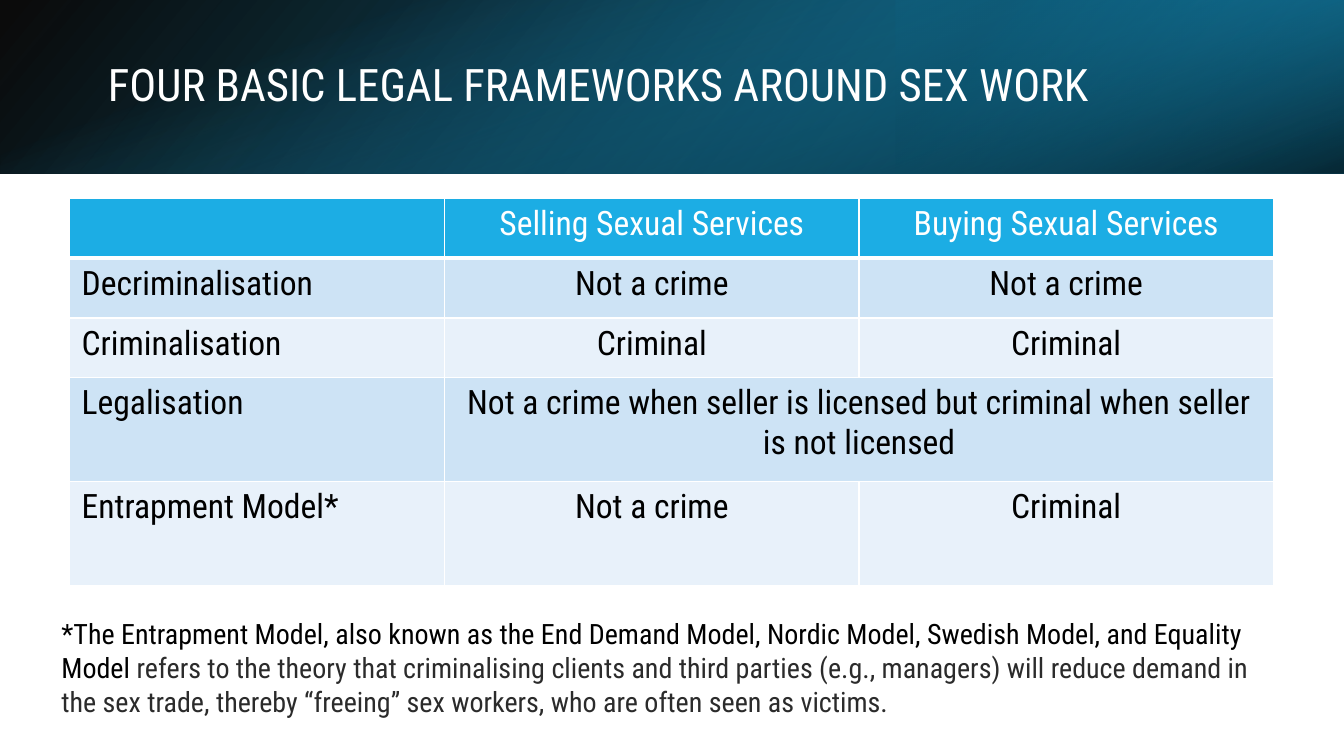
from dataclasses import dataclass

from pptx import Presentation
from pptx import util as u
from pptx.dml import color
from pptx.enum import shapes, text
from pptx.oxml import parse_xml
from pptx.oxml import ns


@dataclass(frozen=True)
class Theme:
    font: str = "Roboto Condensed"
    white: str = "FFFFFF"
    black: str = "000000"
    body: str = "2B2B2B"
    accent: str = "1CADE4"
    mid: str = "1482AC"
    deep: str = "0E5772"
    stripes: tuple = ("CDE3F5", "E8F1FA")
    title_size: int = 32
    table_size: int = 24
    note_size: int = 20


class Deck:
    """Draws themed elements on a slide, with lengths in hundredths of its width and height."""

    def __init__(self, theme):
        self.t = theme
        self.prs = Presentation()
        self.prs.slide_width, self.prs.slide_height = u.Inches(13.33), u.Inches(7.5)
        self.s = self.prs.slides.add_slide(self.prs.slide_layouts[5])

    def x(self, cols):
        return u.Emu(round(self.prs.slide_width * cols / 100))

    def y(self, rows):
        return u.Emu(round(self.prs.slide_height * rows / 100))

    def box(self, left, top, width, height):
        return self.x(left), self.y(top), self.x(width), self.y(height)

    def style(self, target, **values):
        for name, value in values.items():
            setattr(target, name, value)

    def add_text(self, p, content, size, rgb):
        r = p.add_run()
        r.text = content
        self.style(r.font, name=self.t.font, size=u.Pt(size), bold=False)
        r.font.color.rgb = color.RGBColor.from_string(rgb)

    def band(self, area, stops, angle, rotation=0, flip=False):
        left, top, width, height = self.box(*area)
        if rotation == 90:
            left, top = left + (width - height) // 2, top + (height - width) // 2
            width, height = height, width
        sp = self.s.shapes.add_shape(shapes.MSO_SHAPE.RECTANGLE, left, top, width, height)
        sp.rotation = rotation
        sp.shadow.inherit = False
        sp.line.fill.background()
        sp.fill.background()
        marks = "".join(
            f'<a:gs pos="{pos * 1000}"><a:srgbClr val="{rgb}">'
            f'<a:alpha val="{alpha * 1000}"/></a:srgbClr></a:gs>'
            for pos, rgb, alpha in stops)
        grad = parse_xml(
            f'<a:gradFill {ns.nsdecls("a")} rotWithShape="1"><a:gsLst>{marks}</a:gsLst>'
            f'<a:lin ang="{angle * 60000}" scaled="0"/></a:gradFill>')
        spPr = sp.element.spPr
        spPr.replace(spPr.find(ns.qn("a:noFill")), grad)
        if flip:
            spPr.find(ns.qn("a:xfrm")).set("flipH", "1")

    def title(self, area, content):
        sp = self.s.shapes.title
        sp.element.getparent().append(sp.element)
        sp.left, sp.top, sp.width, sp.height = self.box(*area)
        tf = sp.text_frame
        self.style(tf, word_wrap=True, auto_size=text.MSO_AUTO_SIZE.NONE,
                   vertical_anchor=text.MSO_ANCHOR.MIDDLE)
        p = tf.paragraphs[0]
        self.style(p, alignment=text.PP_ALIGN.LEFT, line_spacing=0.9)
        self.add_text(p, content, self.t.title_size, self.t.white)

    def border(self, cell, bottom):
        tcPr = cell._tc.get_or_add_tcPr()
        for side, width in zip("LRTB", (1, 1, 1, bottom)):
            tcPr.append(parse_xml(
                f'<a:ln{side} {ns.nsdecls("a")} w="{int(u.Pt(width))}"><a:solidFill>'
                f'<a:srgbClr val="{self.t.white}"/></a:solidFill></a:ln{side}>'))

    def table(self, left, top, cols, rows, data):
        frame = self.s.shapes.add_table(
            len(rows), len(cols), *self.box(left, top, sum(cols), sum(rows)))
        table = frame.table
        self.style(table, first_row=False, horz_banding=False)
        for column, width in zip(table.columns, cols):
            column.width = self.x(width)
        for row, height in zip(table.rows, rows):
            row.height = self.y(height)
        for i, line in enumerate(data):
            header = i == 0
            fill = self.t.accent if header else self.t.stripes[(i - 1) % 2]
            for j in range(len(cols)):
                cell = table.cell(i, j)
                self.style(cell, margin_left=u.Inches(0.12), margin_right=u.Inches(0.12),
                           margin_top=u.Inches(0.06), margin_bottom=u.Inches(0.06))
                self.border(cell, 3 if header else 1)
                cell.fill.solid()
                cell.fill.fore_color.rgb = color.RGBColor.from_string(fill)
                if j < len(line) and line[j]:
                    p = cell.text_frame.paragraphs[0]
                    p.alignment = text.PP_ALIGN.CENTER if j else text.PP_ALIGN.LEFT
                    self.add_text(p, line[j], self.t.table_size,
                                  self.t.white if header else self.t.black)
            if len(line) < len(cols):
                table.cell(i, len(line) - 1).merge(table.cell(i, len(cols) - 1))

    def note(self, area, runs):
        tf = self.s.shapes.add_textbox(*self.box(*area)).text_frame
        self.style(tf, word_wrap=True, auto_size=text.MSO_AUTO_SIZE.SHAPE_TO_FIT_TEXT)
        for content, rgb in runs:
            self.add_text(tf.paragraphs[0], content, self.t.note_size, rgb)


def main():
    t = Theme()
    deck = Deck(t)
    banner = (0, 0, 100, 22.93)
    deck.band(banner, [(0, t.black, 96), (100, t.mid, 100)], 140, flip=True)
    deck.band((66.67, 0, 33.33, 22.93), [(19, t.deep, 68), (100, t.accent, 79)], 320,
              rotation=180, flip=True)
    deck.band(banner, [(23, t.accent, 0), (99, t.black, 74)], 340, rotation=90)
    deck.title((7.28, 5.07, 86.42, 12.8), "FOUR BASIC LEGAL FRAMEWORKS AROUND SEX WORK")
    deck.table(5.18, 26.27, [27.91, 30.83, 30.83], [7.9] * 3 + [13.73] * 2, [
        ("", "Selling Sexual Services", "Buying Sexual Services"),
        ("Decriminalisation", "Not a crime", "Not a crime"),
        ("Criminalisation", "Criminal", "Criminal"),
        ("Legalisation", "Not a crime when seller is licensed but criminal "
                         "when seller is not licensed"),
        ("Entrapment Model*", "Not a crime", "Criminal"),
    ])
    deck.note((3.83, 80.93, 92.42, 14.8), [
        ("*The Entrapment Model, also known as the End Demand Model, Nordic Model, "
         "Swedish Model, and Equality Model ", t.black),
        ("refers to the theory that criminalising clients and third parties "
         "(e.g., managers) will reduce demand in the sex trade, thereby “freeing” "
         "sex workers, who are often seen as victims.", t.body),
    ])
    deck.prs.save("out.pptx")


if __name__ == "__main__":
    main()
